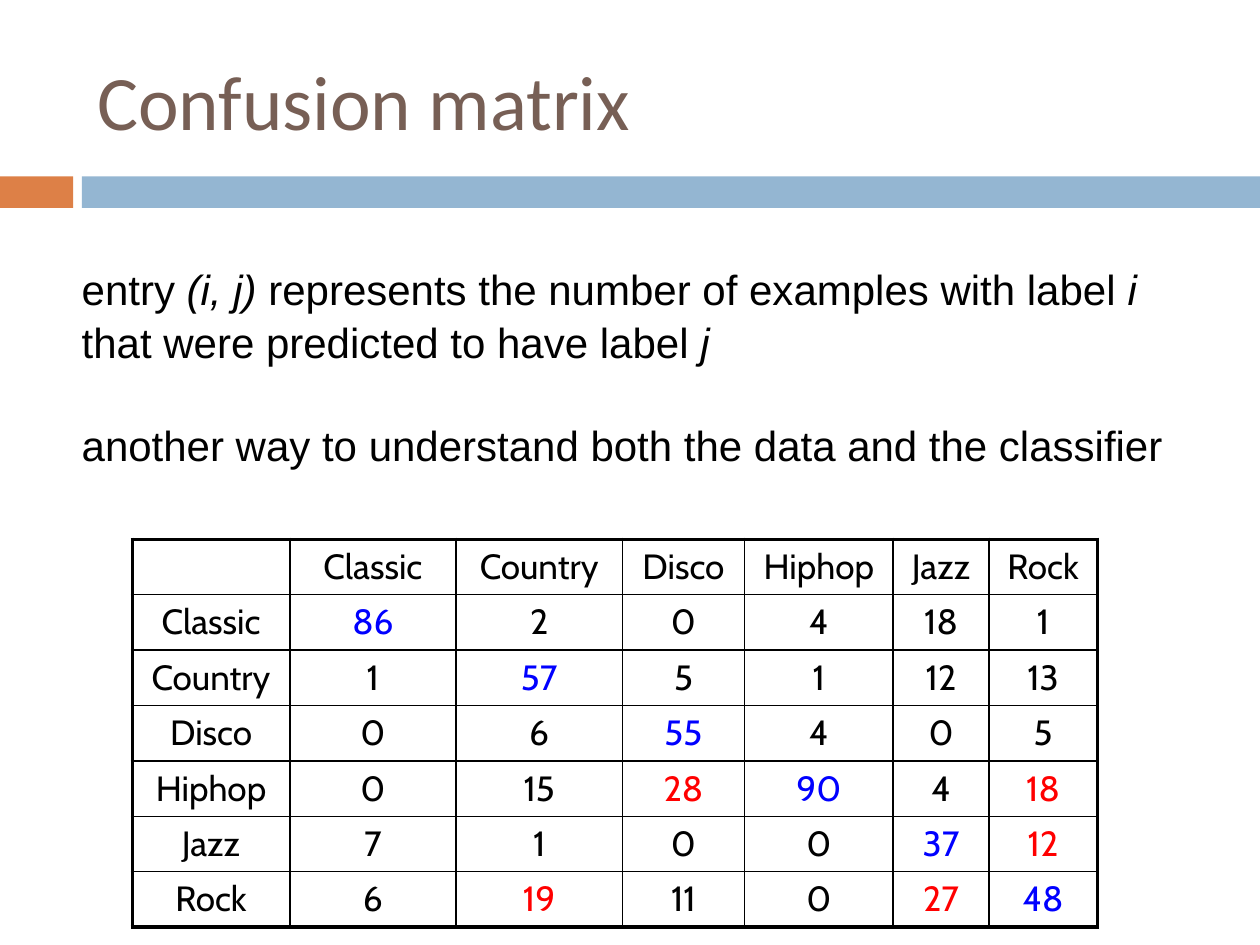
from lxml import etree
from pptx import Presentation
from pptx.dml.color import RGBColor
from pptx.enum.shapes import MSO_SHAPE
from pptx.enum.text import MSO_ANCHOR, PP_ALIGN
from pptx.oxml.ns import qn
from pptx.util import Inches, Pt

RECTANGLE = MSO_SHAPE.RECTANGLE
MIDDLE = MSO_ANCHOR.MIDDLE
LEFT, CENTER = PP_ALIGN.LEFT, PP_ALIGN.CENTER
BLACK, BLUE, RED = "000000", "0000FF", "FF0000"


def set_font(font, name, size, color):
    font.name = name
    font.size = Pt(size)
    font.color.rgb = RGBColor.from_string(color)


def set_border(cell, tag, width):
    line = etree.SubElement(cell._tc.get_or_add_tcPr(), qn(tag), w=str(Pt(width)))
    fill = etree.SubElement(line, qn("a:solidFill"))
    etree.SubElement(fill, qn("a:srgbClr"), val=BLACK)


prs = Presentation()
prs.slide_width = Inches(10)
prs.slide_height = Inches(7.5)
slide = prs.slides.add_slide(prs.slide_layouts[5])

for left, width, color in [(0, 0.58, "DD8047"), (0.65, 9.35, "94B6D2")]:
    band = slide.shapes.add_shape(RECTANGLE, Inches(left), Inches(1.4), Inches(width), Inches(0.25))
    band.shadow.inherit = False
    band.fill.solid()
    band.fill.fore_color.rgb = RGBColor.from_string(color)
    band.line.fill.background()

title = slide.shapes.title
title.left, title.top = Inches(0.67), Inches(0.25)
title.width, title.height = Inches(8.92), Inches(1.08)
title.text_frame.text = "Confusion matrix"
title.text_frame.vertical_anchor = MIDDLE
heading = title.text_frame.paragraphs[0]
heading.alignment = LEFT
set_font(heading.font, "Calibri", 44, "775F55")

genres = ["Classic", "Country", "Disco", "Hiphop", "Jazz", "Rock"]
counts = [
    [86, 2, 0, 4, 18, 1],
    [1, 57, 5, 1, 12, 13],
    [0, 6, 55, 4, 0, 5],
    [0, 15, 28, 90, 4, 18],
    [7, 1, 0, 0, 37, 12],
    [6, 19, 11, 0, 27, 48],
]
confused = {("Hiphop", "Disco"), ("Hiphop", "Rock"), ("Jazz", "Rock"),
            ("Rock", "Country"), ("Rock", "Jazz")}
rows = [[""] + genres] + [[genre] + values for genre, values in zip(genres, counts)]
column_widths = [1.25, 1.32, 1.32, 0.97, 1.18, 0.76, 0.86]
row_height = 0.44
last = len(genres)

matrix = slide.shapes.add_table(
    len(rows), len(column_widths), Inches(1.05), Inches(4.28),
    Inches(sum(column_widths)), Inches(row_height * len(rows))).table
for column, width in zip(matrix.columns, column_widths):
    column.width = Inches(width)
for i, row in enumerate(rows):
    matrix.rows[i].height = Inches(row_height)
    for j, value in enumerate(row):
        cell = matrix.cell(i, j)
        cell.text = str(value)
        color = BLACK
        if i and i == j:
            color = BLUE
        elif (row[0], rows[0][j]) in confused:
            color = RED
        entry = cell.text_frame.paragraphs[0]
        entry.alignment = CENTER
        set_font(entry.font, "Cabin", 20, color)
        for tag, outer in [("a:lnL", j == 0), ("a:lnR", j == last),
                           ("a:lnT", i == 0), ("a:lnB", i == last)]:
            set_border(cell, tag, 2.25 if outer else 1)
        cell.fill.background()

explanation = slide.shapes.add_textbox(Inches(0.55), Inches(2.02), Inches(8.92), Inches(1.72)).text_frame
explanation.word_wrap = True
definition = explanation.paragraphs[0]
for text, italic in [("entry ", False), ("(i, j)", True),
                     (" represents the number of examples with label ", False), ("i", True),
                     (" that were predicted to have label ", False), ("j", True)]:
    run = definition.add_run()
    run.text = text
    run.font.italic = italic
purpose = explanation.add_paragraph()
purpose.text = "another way to understand both the data and the classifier"
purpose.space_before = Pt(29)
for paragraph in explanation.paragraphs:
    paragraph.line_spacing = 1.05
    set_font(paragraph.font, "Arial", 24, BLACK)

prs.save("out.pptx")
